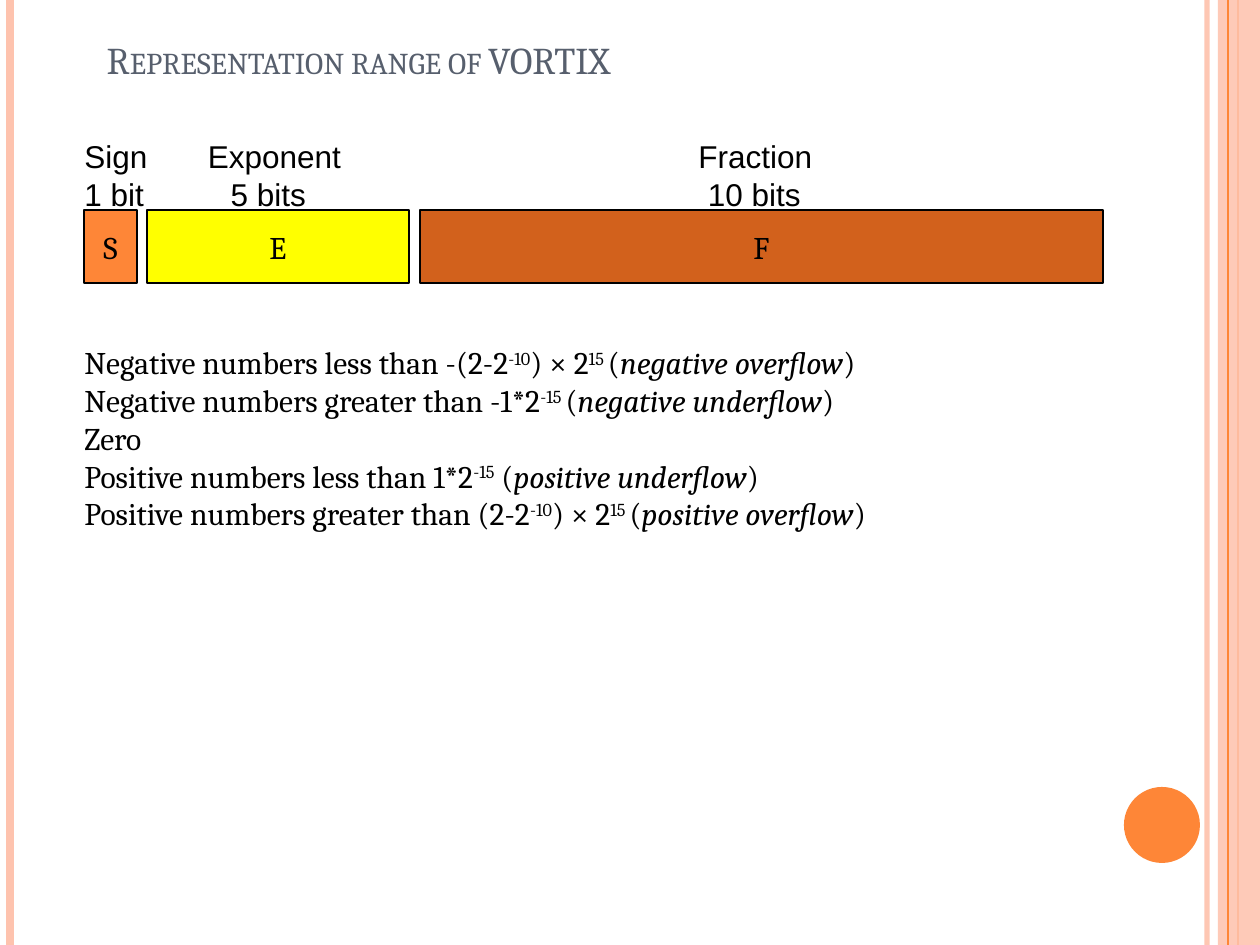
import pptx
import pptx.dml.color
import pptx.enum.shapes
import pptx.enum.text
import pptx.oxml.ns
import pptx.util
from lxml import etree

PX = 914400 / 126
WIDTH, HEIGHT = 1260, 945
COLORS = {
    "peach": "FEC3AE",
    "orange": "FE8637",
    "rust": "D2611C",
    "yellow": "FFFF00",
    "slate": "575F6D",
    "black": "000000",
}
STRIPES_BEHIND = [
    (1207, "peach", 3, 93),
    (10, "peach", 4.5, 100),
    (1238, "orange", 1.5, 100),
]
FIELDS = [
    ("S", 84, 53, "orange"),
    ("E", 147, 262, "yellow"),
    ("F", 420, 683, "rust"),
]
HEADINGS = [
    ("Sign\tExponent\tFraction", (190, 671)),
    ("1 bit\t5 bits\t10 bits", (184, 670)),
]
RANGES = [
    [("Negative numbers less than -(2-2", ""), ("-10", "super"), (") × 2", ""),
     ("15 ", "super"), ("(", ""), ("negative overflow", "italic"), (")", "")],
    [("Negative numbers greater than -1*2", ""), ("-15 ", "super"), ("(", ""),
     ("negative underflow", "italic"), (")", "")],
    [("Zero", "")],
    [("Positive numbers less than 1*2", ""), ("-15", "super"), (" (", ""),
     ("positive underflow", "italic"), (")", "")],
    [("Positive numbers greater than (2-2", ""), ("-10", "super"), (") × 2", ""),
     ("15 ", "super"), ("(", ""), ("positive overflow", "italic"), (")", "")],
]


def px(value):
    return pptx.util.Emu(round(value * PX))


def rgb(name):
    return pptx.dml.color.RGBColor.from_string(COLORS[name])


def add_element(parent, tag, **attributes):
    return etree.SubElement(parent, pptx.oxml.ns.qn(tag), attributes)


def set_opacity(shape, percent):
    color = next(shape._element.spPr.iter(pptx.oxml.ns.qn("a:srgbClr")))
    add_element(color, "a:alpha", val=str(percent * 1000))


def add_span(para, text, font="Cambria", size=18, color="black", style=""):
    span = para.add_run()
    span.text = text
    span.font.name = font
    span.font.size = pptx.util.Pt(size)
    span.font.color.rgb = rgb(color)
    if style == "italic":
        span.font.italic = True
    if style == "super":
        span._r.get_or_add_rPr().set("baseline", "30000")
    return span


def add_stripe(page, x, color, weight, opacity):
    stripe = page.shapes.add_connector(
        pptx.enum.shapes.MSO_CONNECTOR.STRAIGHT, px(x), 0, px(x), px(HEIGHT))
    stripe.line.color.rgb = rgb(color)
    stripe.line.width = pptx.util.Pt(weight)
    add_element(stripe._element.spPr, "a:effectLst")
    if opacity < 100:
        set_opacity(stripe, opacity)


def add_filled(page, kind, left, top, width, height, color):
    shape = page.shapes.add_shape(kind, px(left), px(top), px(width), px(height))
    shape.shadow.inherit = False
    shape.fill.solid()
    shape.fill.fore_color.rgb = rgb(color)
    shape.line.fill.background()
    return shape


def add_decoration(page):
    kinds = pptx.enum.shapes.MSO_SHAPE
    for stripe in STRIPES_BEHIND:
        add_stripe(page, *stripe)
    band = add_filled(page, kinds.RECTANGLE, 1218, 0, 42, HEIGHT, "peach")
    set_opacity(band, 87)
    add_stripe(page, 1228, "orange", 0.75, 100)
    add_filled(page, kinds.OVAL, 1124, 787, 76, 76, "orange")


def add_title(page, text):
    title = page.shapes.title
    title.left, title.top, title.width, title.height = px(94), px(36), px(1082), px(52)
    frame = title.text_frame
    frame.vertical_anchor = pptx.enum.text.MSO_ANCHOR.BOTTOM
    frame.auto_size = pptx.enum.text.MSO_AUTO_SIZE.NONE
    para = frame.paragraphs[0]
    para.alignment = pptx.enum.text.PP_ALIGN.LEFT
    span = add_span(para, text, size=21.6, color="slate")
    span._r.get_or_add_rPr().set("cap", "small")


def add_text_box(page, left, top, width, height, count):
    box = page.shapes.add_textbox(px(left), px(top), px(width), px(height))
    frame = box.text_frame
    frame.word_wrap = True
    for _ in range(count - 1):
        frame.add_paragraph()
    return frame.paragraphs


def add_headings(page):
    paras = add_text_box(page, 72, 131, 780, 88, len(HEADINGS))
    for para, (text, stops) in zip(paras, HEADINGS):
        tabs = add_element(para._p.get_or_add_pPr(), "a:tabLst")
        for stop in stops:
            add_element(tabs, "a:tab", pos=str(px(stop)), algn="ctr")
        add_span(para, text, font="Arial")


def add_field(page, label, left, width, color):
    field = add_filled(
        page, pptx.enum.shapes.MSO_SHAPE.RECTANGLE, left, 210, width, 73, color)
    field.line.color.rgb = rgb("black")
    field.line.width = pptx.util.Pt(0.75)
    frame = field.text_frame
    frame.word_wrap = False
    frame.vertical_anchor = pptx.enum.text.MSO_ANCHOR.MIDDLE
    para = frame.paragraphs[0]
    para.alignment = pptx.enum.text.PP_ALIGN.CENTER
    add_span(para, label)


def add_ranges(page):
    paras = add_text_box(page, 72, 337, 1050, 204, len(RANGES))
    for para, spans in zip(paras, RANGES):
        for text, style in spans:
            add_span(para, text, style=style)


def main():
    deck = pptx.Presentation()
    deck.slide_width, deck.slide_height = px(WIDTH), px(HEIGHT)
    page = deck.slides.add_slide(deck.slide_layouts[5])
    add_decoration(page)
    add_title(page, "Representation range of VORTIX")
    add_ranges(page)
    add_headings(page)
    for field in FIELDS:
        add_field(page, *field)
    deck.save("out.pptx")


if __name__ == "__main__":
    main()
